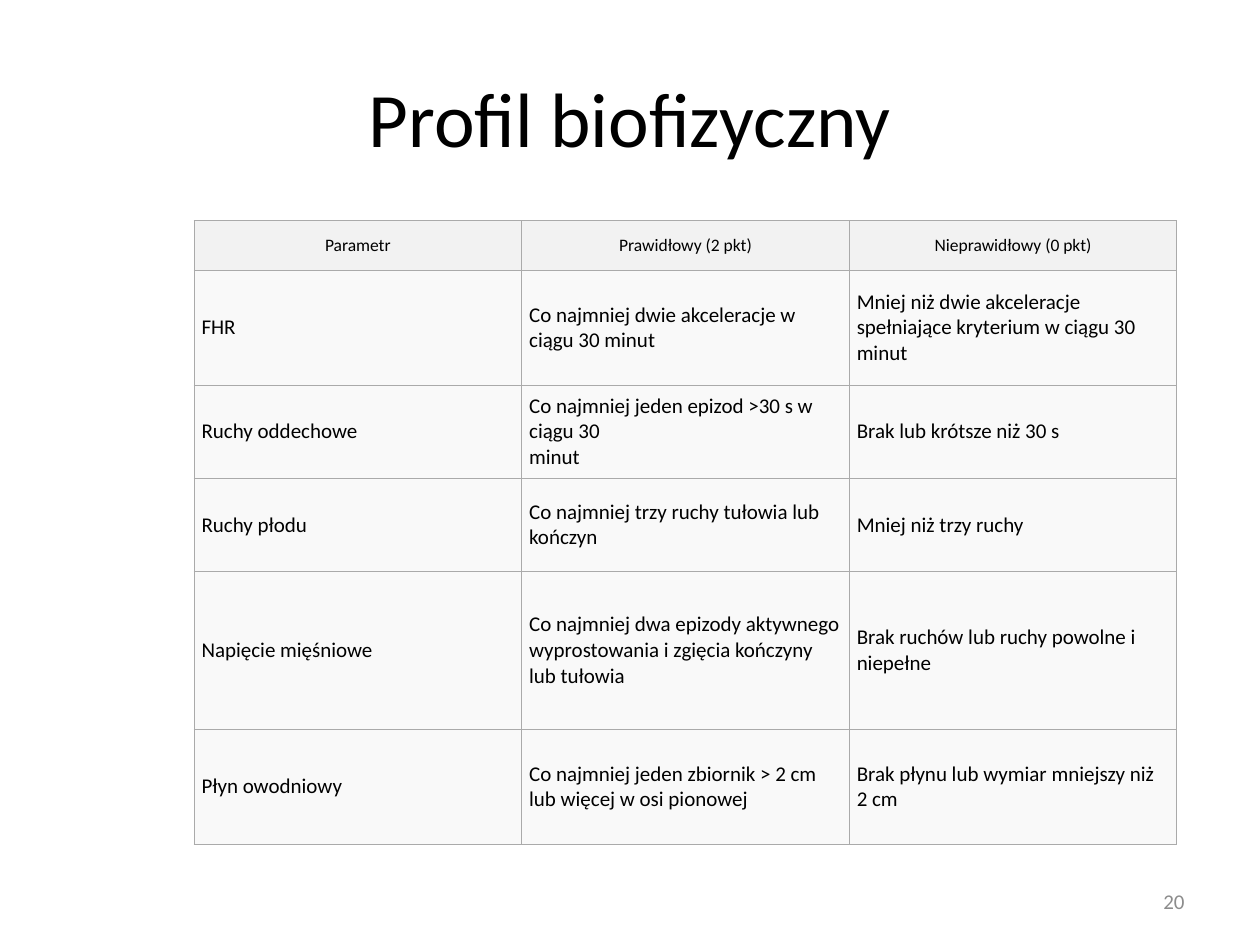
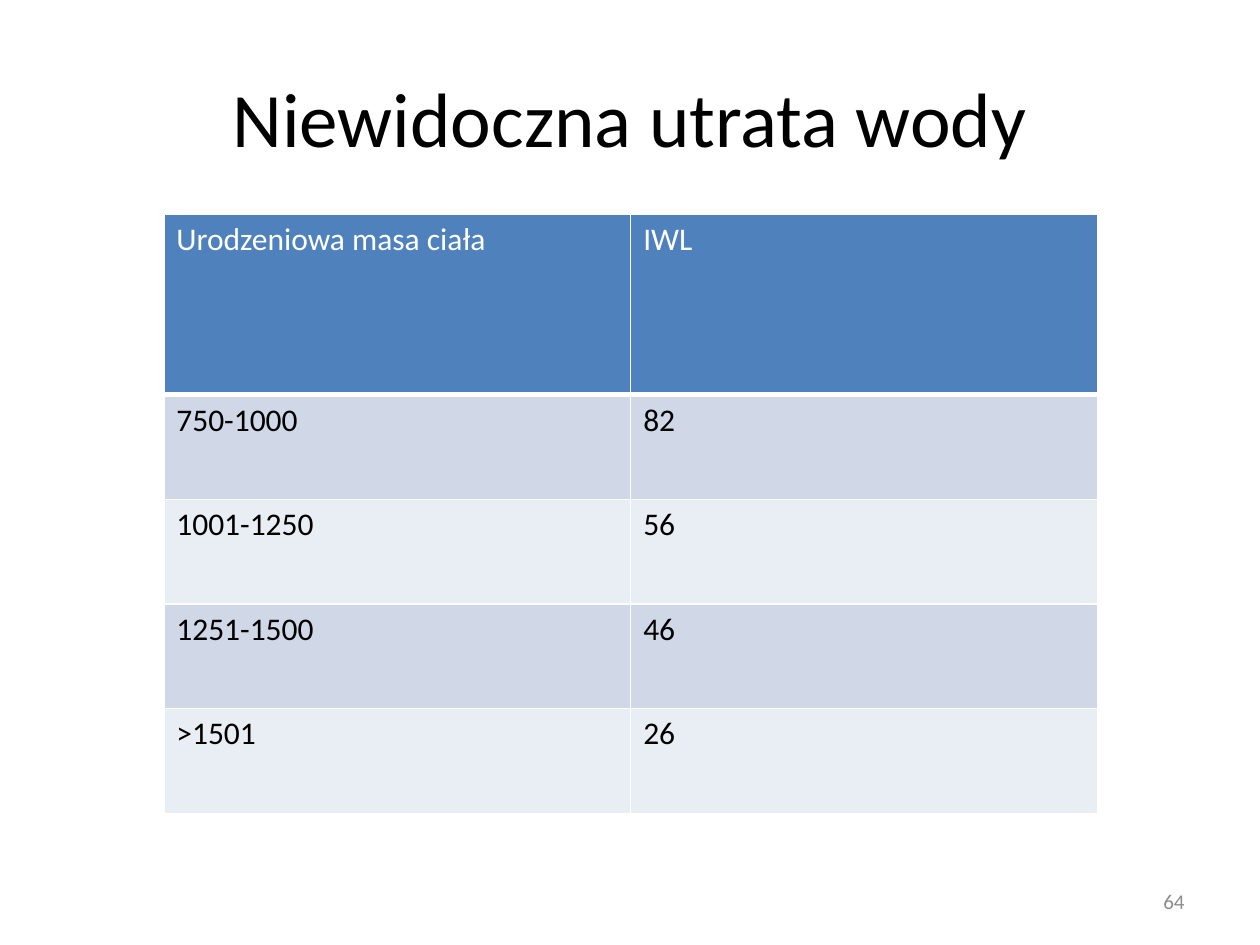
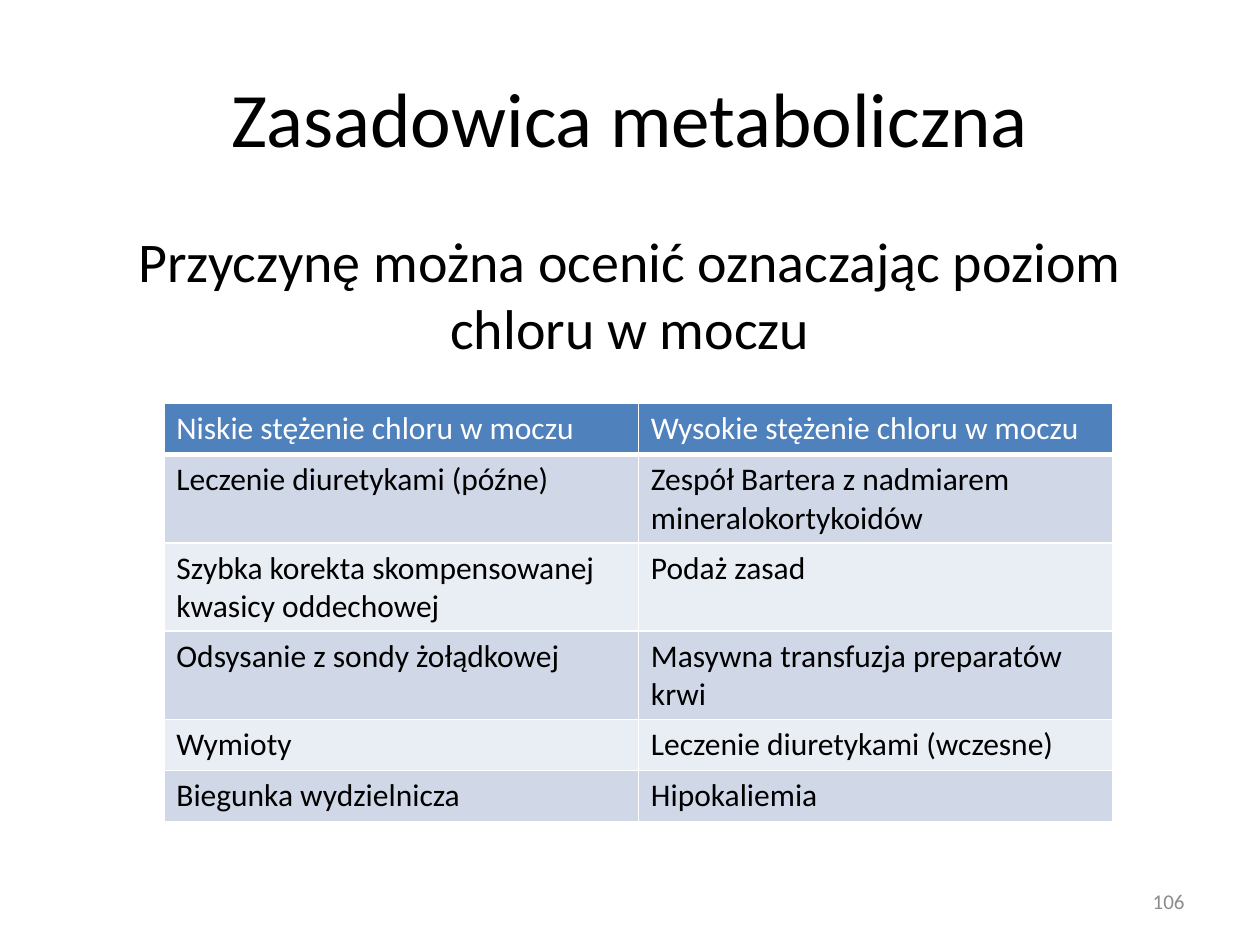
"""Build three slides on fetal and neonatal assessment tables."""
from dataclasses import dataclass

from lxml import etree
from pptx import Presentation
from pptx.dml.color import RGBColor
from pptx.enum.text import MSO_ANCHOR, PP_ALIGN
from pptx.oxml.ns import qn
from pptx.util import Pt

LEFT, CENTER, RIGHT = PP_ALIGN.LEFT, PP_ALIGN.CENTER, PP_ALIGN.RIGHT
TOP, MIDDLE = MSO_ANCHOR.TOP, MSO_ANCHOR.MIDDLE


@dataclass(frozen=True)
class Theme:
    """Colours and type sizes shared by the slides."""
    font: str = "Calibri"
    ink: str = "000000"
    paper: str = "FFFFFF"
    muted: str = "8C8C8C"
    grid: str = "AAAAAA"
    header_gray: str = "F2F2F2"
    row_gray: str = "F9F9F9"
    accent: str = "4F81BD"
    band_dark: str = "D0D8E8"
    band_light: str = "E9EDF4"
    title: int = 44
    body: int = 32
    table: int = 18
    compact: int = 12
    compact_header: int = 10
    number: int = 12


theme = Theme()

GRID_STYLE = {
    "header": (theme.compact_header, theme.ink, CENTER),
    "row": (theme.compact, theme.ink, LEFT),
    "header_fill": theme.header_gray,
    "bands": [theme.row_gray],
    "line": theme.grid,
    "line_width": 0.6,
    "header_rule": 0.6,
    "cell": {"vertical_anchor": MIDDLE, "margin_left": Pt(4.3), "margin_right": Pt(4.3),
             "margin_top": Pt(2.2), "margin_bottom": Pt(2.2)},
}
BANDED_STYLE = {
    "header": (theme.table, theme.paper, LEFT),
    "row": (theme.table, theme.ink, LEFT),
    "header_fill": theme.accent,
    "bands": [theme.band_dark, theme.band_light],
    "line": theme.paper,
    "line_width": 1,
    "header_rule": 3,
    "cell": {"vertical_anchor": TOP},
}

PAGES = [
    {
        "title": "Profil biofizyczny", "number": "20", "style": GRID_STYLE,
        "left": 110.9, "top": 126, "column": 187.2,
        "heights": [28.5, 65.7, 53.2, 53.2, 90.2, 65.7],
        "rows": [
            ["Parametr", "Prawidłowy (2 pkt)", "Nieprawidłowy (0 pkt)"],
            ["FHR", "Co najmniej dwie akceleracje w ciągu 30 minut",
             "Mniej niż dwie akceleracje spełniające kryterium w ciągu 30 minut"],
            ["Ruchy oddechowe", "Co najmniej jeden epizod >30 s w ciągu 30\nminut",
             "Brak lub krótsze niż 30 s"],
            ["Ruchy płodu", "Co najmniej trzy ruchy tułowia lub kończyn",
             "Mniej niż trzy ruchy"],
            ["Napięcie mięśniowe",
             "Co najmniej dwa epizody aktywnego wyprostowania i zgięcia kończyny lub tułowia",
             "Brak ruchów lub ruchy powolne i niepełne"],
            ["Płyn owodniowy", "Co najmniej jeden zbiornik > 2 cm lub więcej w osi pionowej",
             "Brak płynu lub wymiar mniejszy niż 2 cm"],
        ],
    },
    {
        "title": "Niewidoczna utrata wody", "number": "64", "style": BANDED_STYLE,
        "left": 93.6, "top": 122.6, "column": 266.8,
        "heights": [103] + [59.8] * 4,
        "rows": [
            ["Urodzeniowa masa ciała", "IWL"],
            ["750-1000", "82"],
            ["1001-1250", "56"],
            ["1251-1500", "46"],
            [">1501", "26"],
        ],
    },
    {
        "title": "Zasadowica metaboliczna", "number": "106", "style": BANDED_STYLE,
        "body": "Przyczynę można ocenić oznaczając poziom chloru w moczu",
        "left": 93.6, "top": 230.6, "column": 271.2,
        "heights": [29.2] * 6,
        "rows": [
            ["Niskie stężenie chloru w moczu", "Wysokie stężenie chloru w moczu"],
            ["Leczenie diuretykami (późne)", "Zespół Bartera z nadmiarem mineralokortykoidów"],
            ["Szybka korekta skompensowanej kwasicy oddechowej", "Podaż zasad"],
            ["Odsysanie z sondy żołądkowej", "Masywna transfuzja preparatów krwi"],
            ["Wymioty", "Leczenie diuretykami (wczesne)"],
            ["Biegunka wydzielnicza", "Hipokaliemia"],
        ],
    },
]


def write_text(frame, text, size, color, align):
    """Write one paragraph per line of text."""
    frame.text = text
    for para in frame.paragraphs:
        para.alignment = align
        for span in para.runs:
            for name, value in {"name": theme.font, "size": Pt(size), "bold": False}.items():
                setattr(span.font, name, value)
            span.font.color.rgb = RGBColor.from_string(color)


def draw_borders(cell, color, widths):
    """Draw the left, right, top and bottom borders of a cell."""
    properties = cell._tc.get_or_add_tcPr()
    for side, width in zip(("lnL", "lnR", "lnT", "lnB"), widths):
        line = etree.SubElement(properties, qn(f"a:{side}"), w=str(int(Pt(width))))
        fill = etree.SubElement(line, qn("a:solidFill"))
        etree.SubElement(fill, qn("a:srgbClr"), val=color)


deck = Presentation()
deck.slide_width, deck.slide_height = Pt(720), Pt(540)

for content in PAGES:
    page = deck.slides.add_slide(deck.slide_layouts[6])
    page.background.fill.solid()
    page.background.fill.fore_color.rgb = RGBColor.from_string(theme.paper)

    texts = [
        (content["title"], (36, 21.6, 648, 90), MIDDLE, (theme.title, theme.ink, CENTER)),
        (content.get("body"), (36, 126, 648, 356.4), TOP, (theme.body, theme.ink, CENTER)),
        (content["number"], (516, 500.5, 168, 28.8), MIDDLE, (theme.number, theme.muted, RIGHT)),
    ]
    for text, place, anchor, look in texts:
        if text:
            box = page.shapes.add_textbox(*map(Pt, place))
            box.text_frame.word_wrap = True
            box.text_frame.vertical_anchor = anchor
            write_text(box.text_frame, text, *look)

    style, rows, heights = content["style"], content["rows"], content["heights"]
    column_count = len(rows[0])
    table = page.shapes.add_table(
        len(rows), column_count, Pt(content["left"]), Pt(content["top"]),
        Pt(content["column"] * column_count), Pt(sum(heights))).table
    table.horz_banding = False
    for column in table.columns:
        column.width = Pt(content["column"])
    for row_index, (values, height) in enumerate(zip(rows, heights)):
        table.rows[row_index].height = Pt(height)
        is_header = row_index == 0
        bands = style["bands"]
        color = style["header_fill"] if is_header else bands[(row_index - 1) % len(bands)]
        rule = style["header_rule"] if is_header else style["line_width"]
        for column_index, value in enumerate(values):
            cell = table.cell(row_index, column_index)
            for name, setting in style["cell"].items():
                setattr(cell, name, setting)
            draw_borders(cell, style["line"], [style["line_width"]] * 3 + [rule])
            cell.fill.solid()
            cell.fill.fore_color.rgb = RGBColor.from_string(color)
            write_text(cell.text_frame, value, *style["header" if is_header else "row"])

deck.save("out.pptx")
